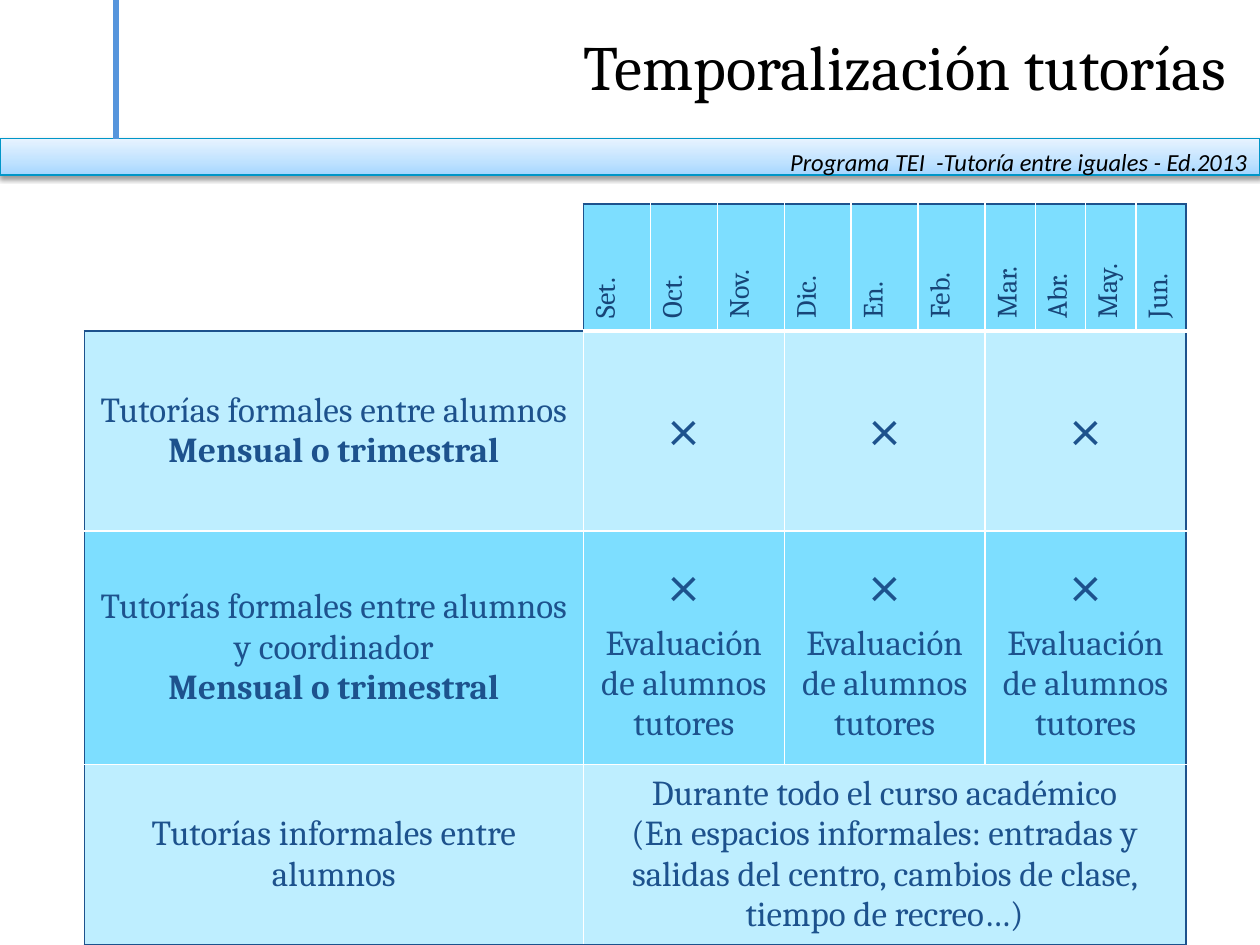
from copy import deepcopy
from dataclasses import dataclass

from pptx import Presentation
from pptx.dml.color import RGBColor
from pptx.enum.shapes import MSO_CONNECTOR, MSO_SHAPE
from pptx.enum.text import MSO_ANCHOR, PP_ALIGN
from pptx.oxml import parse_xml
from pptx.oxml.ns import nsdecls, qn
from pptx.util import Inches, Pt


@dataclass(frozen=True)
class Theme:
    heading_font: str = "Cambria"
    caption_font: str = "Calibri"
    ink: str = "000000"
    month_ink: str = "174578"
    navy: str = "1D528D"
    white: str = "FFFFFF"
    strong: str = "7DDEFF"
    pale: str = "BEEEFF"
    rule: str = "5695DC"
    band_line: str = "0096C8"
    band_stops: tuple = ((0, "A5D6FF"), (0.35, "BFE2FF"), (1, "E7F3FF"))
    title_size: int = 36
    mark_size: int = 36
    body_size: int = 20
    month_size: int = 16
    caption_size: int = 14


THEME = Theme()
COLUMNS, ROWS = 40, 30
BAND_TOP = 4.4
TERMS = (("Set.", "Oct.", "Nov."), ("Dic.", "En.", "Feb."), ("Mar.", "Abr.", "May.", "Jun."))
LABEL_COLUMNS = 2
LABEL_WIDTH, TERM_WIDTH = 7.92, 6.38
ROW_HEIGHTS = (1.9, 1.9, 6.36, 7.4, 5.52)
FREQUENCY = ("Mensual o trimestral", THEME.body_size, True)
MARK = ("×", THEME.mark_size, False)
REVIEW = ("Evaluación de alumnos tutores", THEME.body_size, False)
THIN, THICK = 1, 3


def grid(units):
    return Inches(units * 10 / COLUMNS)


def rgb(colour):
    return RGBColor.from_string(colour)


def body(text):
    return (text, THEME.body_size, False)


def add_run(paragraph, text, font, size, colour, bold=False, italic=False):
    run = paragraph.add_run()
    run.text = text
    run.font.name = font
    run.font.size = Pt(size)
    run.font.color.rgb = rgb(colour)
    run.font.bold = bold
    run.font.italic = italic


def add_band(slide):
    band = slide.shapes.add_shape(
        MSO_SHAPE.RECTANGLE, 0, grid(BAND_TOP), grid(COLUMNS), grid(1.16))
    band.line.color.rgb = rgb(THEME.band_line)
    band.line.width = Pt(0.75)
    band.fill.gradient()
    band.fill.gradient_angle = 90
    stop_list = band._element.spPr.find(qn("a:gradFill")).find(qn("a:gsLst"))
    stop_list.append(deepcopy(stop_list[0]))
    for stop, (position, colour) in zip(band.fill.gradient_stops, THEME.band_stops):
        stop.position = position
        stop.color.rgb = rgb(colour)
    band._element.spPr.append(parse_xml(
        f'<a:effectLst {nsdecls("a")}><a:outerShdw blurRad="{Pt(3.1)}" dist="{Pt(1.6)}" '
        f'dir="5400000" rotWithShape="0"><a:srgbClr val="{THEME.ink}">'
        '<a:alpha val="38000"/></a:srgbClr></a:outerShdw></a:effectLst>'))


def add_rule(slide):
    rule = slide.shapes.add_connector(
        MSO_CONNECTOR.STRAIGHT, grid(3.68), 0, grid(3.68), grid(BAND_TOP))
    rule.line.color.rgb = rgb(THEME.rule)
    rule.line.width = Pt(3)
    rule._element.spPr.append(parse_xml(f'<a:effectLst {nsdecls("a")}/>'))


def add_caption(slide, text):
    caption = slide.shapes.add_textbox(grid(24.4), grid(4.48), grid(15.6), grid(2.28))
    caption.text_frame.word_wrap = True
    paragraph = caption.text_frame.paragraphs[0]
    paragraph.alignment = PP_ALIGN.RIGHT
    add_run(paragraph, text, THEME.caption_font, THEME.caption_size, THEME.ink, italic=True)


def set_title(slide, text):
    title = slide.shapes.title
    title.left, title.top, title.width, title.height = map(grid, (1, 0.68, 38.32, 2.8))
    title.text_frame.vertical_anchor = MSO_ANCHOR.MIDDLE
    paragraph = title.text_frame.paragraphs[0]
    paragraph.alignment = PP_ALIGN.RIGHT
    add_run(paragraph, text, THEME.heading_font, THEME.title_size, THEME.ink)


def set_borders(cell, borders):
    properties = cell._tc.get_or_add_tcPr()
    for side in "LRTB":
        if side in borders:
            colour, width = borders[side]
            line = f'<a:solidFill><a:srgbClr val="{colour}"/></a:solidFill>'
        else:
            width, line = 0, "<a:noFill/>"
        properties.append(parse_xml(
            f'<a:ln{side} {nsdecls("a")} w="{Pt(width)}">{line}</a:ln{side}>'))


def make_block(table, row, column, row_span, column_span, fill, borders):
    for r in range(row, row + row_span):
        for c in range(column, column + column_span):
            set_borders(table.cell(r, c), borders)
    block = table.cell(row, column)
    block.merge(table.cell(row + row_span - 1, column + column_span - 1))
    block.fill.solid()
    block.fill.fore_color.rgb = rgb(fill)
    return block


def add_month(table, column, month):
    last = len(table.columns) - 1
    navy, white = (THEME.navy, THIN), (THEME.white, THIN)
    borders = {
        "L": navy if column == LABEL_COLUMNS else white,
        "R": navy if column == last else white,
        "T": navy,
        "B": (THEME.white, THICK),
    }
    block = make_block(table, 0, column, 2, 1, THEME.strong, borders)
    block._tc.get_or_add_tcPr().set("vert", "vert270")
    add_run(block.text_frame.paragraphs[0], month, THEME.heading_font,
            THEME.month_size, THEME.month_ink)


def add_entry(table, row, column, span, fill, lines):
    navy, white = (THEME.navy, THIN), (THEME.white, THIN)
    is_label = column == 0
    borders = {
        "L": navy if is_label else white,
        "R": navy if column + span == len(table.columns) else white,
        "T": navy if is_label and row == 2 else white,
        "B": navy if row == len(table.rows) - 1 else white,
    }
    if row == 2 and not is_label:
        borders["T"] = (THEME.white, THICK)
    block = make_block(table, row, column, 1, span, fill, borders)
    block.vertical_anchor = MSO_ANCHOR.MIDDLE
    frame = block.text_frame
    for index, (text, size, bold) in enumerate(lines):
        paragraph = frame.add_paragraph() if index else frame.paragraphs[0]
        paragraph.alignment = PP_ALIGN.CENTER
        add_run(paragraph, text, THEME.heading_font, size, THEME.navy, bold)


def clear_corner(table):
    for row in range(2):
        for column in range(LABEL_COLUMNS):
            borders = {}
            if column == LABEL_COLUMNS - 1:
                borders["R"] = (THEME.navy, THIN)
            if row == 1:
                borders["B"] = (THEME.navy, THIN)
            corner = table.cell(row, column)
            set_borders(corner, borders)
            corner.fill.background()


def add_schedule(slide):
    months = [month for term in TERMS for month in term]
    widths = [LABEL_WIDTH] * LABEL_COLUMNS
    widths += [TERM_WIDTH / len(term) for term in TERMS for _ in term]
    table = slide.shapes.add_table(
        len(ROW_HEIGHTS), len(widths), grid(2.68), grid(6.48),
        grid(sum(widths)), grid(sum(ROW_HEIGHTS))).table
    table.first_row = table.horz_banding = False
    for column, width in zip(table.columns, widths):
        column.width = grid(width)
    for row, height in zip(table.rows, ROW_HEIGHTS):
        row.height = grid(height)

    clear_corner(table)
    for column, month in enumerate(months, LABEL_COLUMNS):
        add_month(table, column, month)

    formal = (
        (THEME.pale, [body("Tutorías formales entre alumnos"), FREQUENCY], [MARK]),
        (THEME.strong, [body("Tutorías formales entre alumnos y coordinador"), FREQUENCY],
         [MARK, REVIEW]),
    )
    for row, (fill, label, term_lines) in enumerate(formal, 2):
        add_entry(table, row, 0, LABEL_COLUMNS, fill, label)
        column = LABEL_COLUMNS
        for term in TERMS:
            add_entry(table, row, column, len(term), fill, term_lines)
            column += len(term)

    add_entry(table, 4, 0, LABEL_COLUMNS, THEME.pale, [body("Tutorías informales entre alumnos")])
    add_entry(table, 4, LABEL_COLUMNS, len(months), THEME.pale, [
        body("Durante todo el curso académico"),
        body("(En espacios informales: entradas y salidas del centro, cambios de clase, "
             "tiempo de recreo…)"),
    ])


def main():
    presentation = Presentation()
    presentation.slide_width, presentation.slide_height = grid(COLUMNS), grid(ROWS)
    slide = presentation.slides.add_slide(presentation.slide_layouts[5])
    add_band(slide)
    add_rule(slide)
    add_caption(slide, "Programa TEI  -Tutoría entre iguales - Ed.2013")
    set_title(slide, "Temporalización tutorías")
    add_schedule(slide)
    presentation.save("out.pptx")


if __name__ == "__main__":
    main()
